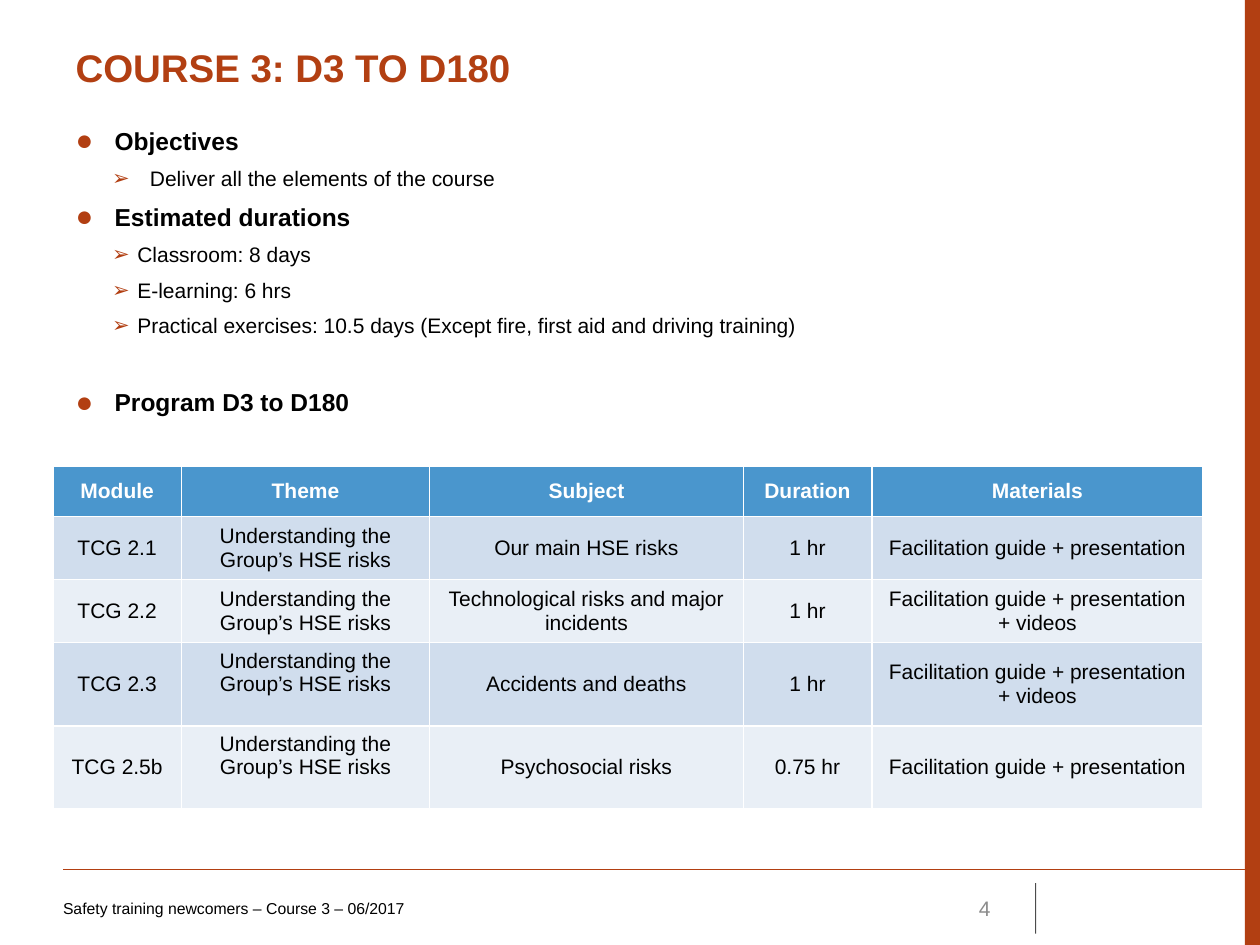
"""Build the course 3 slide: objectives, durations and program table."""
from lxml import etree
from pptx import Presentation
from pptx.dml.color import RGBColor
from pptx.enum.shapes import MSO_CONNECTOR, MSO_SHAPE
from pptx.enum.text import MSO_ANCHOR, MSO_AUTO_SIZE, PP_ALIGN
from pptx.oxml.ns import qn
from pptx.util import Inches, Pt

LEFT, MID, RIGHT = PP_ALIGN.LEFT, PP_ALIGN.CENTER, PP_ALIGN.RIGHT
TOP, CENTER = MSO_ANCHOR.TOP, MSO_ANCHOR.MIDDLE
FIXED = MSO_AUTO_SIZE.NONE
RECT, LINE = MSO_SHAPE.RECTANGLE, MSO_CONNECTOR.STRAIGHT
COLORS = {"rust": "B23F12", "black": "000000", "white": "FFFFFF", "gray": "8C8C8C",
          "head": "4A96CD", "odd": "D0DDED", "even": "E9EFF6"}


def color(name):
    return RGBColor.from_string(COLORS[name])


def write(frame, text, size=12, ink="black", bold=False, align=LEFT,
          before=0, after=0, bullet=None, scale=100, indent=0, hang=0):
    para = frame.paragraphs[0] if not frame.text else frame.add_paragraph()
    para.alignment = align
    para.space_before, para.space_after = Pt(before), Pt(after)
    if bullet:
        props = para._p.get_or_add_pPr()
        props.set("marL", str(Inches(indent)))
        props.set("indent", str(-Inches(hang)))
        tint = etree.SubElement(props, qn("a:buClr"))
        etree.SubElement(tint, qn("a:srgbClr"), val=COLORS["rust"])
        etree.SubElement(props, qn("a:buSzPct"), val=str(scale * 1000))
        etree.SubElement(props, qn("a:buFont"), typeface="Arial")
        etree.SubElement(props, qn("a:buChar"), char=bullet)
    run = para.add_run()
    run.text = text
    run.font.name, run.font.size, run.font.bold = "Arial", Pt(size), bold
    run.font.color.rgb = color(ink)
    return para


deck = Presentation()
deck.slide_width, deck.slide_height = Inches(10), Inches(7.5)
slide = deck.slides.add_slide(deck.slide_layouts[1])
shapes = slide.shapes

band = shapes.add_shape(RECT, Inches(9.88), 0, Inches(0.12), Inches(7.5))
band.shadow.inherit = False
band.fill.solid()
band.fill.fore_color.rgb = color("rust")
band.line.fill.background()

for x1, y1, x2, y2, ink, width, alpha in [(0.5, 6.9, 10, 6.9, "rust", 0.75, 100),
                                          (8.22, 7.01, 8.22, 7.41, "black", 0.5, 70)]:
    rule = shapes.add_connector(LINE, Inches(x1), Inches(y1), Inches(x2), Inches(y2))
    rule.line.color.rgb = color(ink)
    rule.line.width = Pt(width)
    tint = rule._element.spPr.find(".//" + qn("a:srgbClr"))
    etree.SubElement(tint, qn("a:alpha"), val=str(alpha * 1000))
    etree.SubElement(rule._element.spPr, qn("a:effectLst"))

title, body = shapes.title, slide.placeholders[1]
for holder, top, height in [(title, 0.3, 0.69), (body, 0.95, 2.4)]:
    holder.left, holder.top = Inches(0.5), Inches(top)
    holder.width, holder.height = Inches(8.99), Inches(height)
    holder.text_frame.auto_size = FIXED
    holder.text_frame.vertical_anchor = TOP
write(title.text_frame, "COURSE 3: D3 TO D180", size=22, ink="rust", bold=True)

POINTS = [
    (0, "Objectives", 0.31, 0.31, 0),
    (1, "Deliver all the elements of the course", 0.59, 0.3, 3),
    (0, "Estimated durations", 0.31, 0.31, 3),
    (1, "Classroom: 8 days", 0.49, 0.2, 3),
    (1, "E-learning: 6 hrs", 0.49, 0.2, 3),
    (1, "Practical exercises: 10.5 days (Except fire, first aid and driving training)",
     0.49, 0.2, 3),
    (0, "Program D3 to D180", 0.31, 0.31, 25),
]
for level, text, indent, hang, before in POINTS:
    para = write(body.text_frame, text, size=12 if level else 14, bold=not level,
                 before=before, after=3, bullet="➢" if level else "●",
                 scale=100 if level else 120, indent=indent, hang=hang)
    para.level = level

for text, left, width, size, ink, align, inset in [
        ("Safety training newcomers – Course 3 – 06/2017", 0.5, 6.08, 9, "black", LEFT, 0),
        ("4", 7.17, 0.79, 12, "gray", RIGHT, 0.1)]:
    box = shapes.add_textbox(Inches(left), Inches(7.01), Inches(width), Inches(0.4))
    frame = box.text_frame
    frame.word_wrap = True
    frame.vertical_anchor = CENTER
    frame.margin_left = Inches(inset)
    write(frame, text, size=size, ink=ink, align=align)

THEME = "Understanding the Group’s HSE risks"
GUIDE = "Facilitation guide + presentation"
ROWS = [
    ("Module", "Theme", "Subject", "Duration", "Materials"),
    ("TCG 2.1", THEME, "Our main HSE risks", "1 hr", GUIDE),
    ("TCG 2.2", THEME, "Technological risks and major incidents", "1 hr", GUIDE + " + videos"),
    ("TCG 2.3", THEME, "Accidents and deaths", "1 hr", GUIDE + " + videos"),
    ("TCG 2.5b", THEME, "Psychosocial risks", "0.75 hr", GUIDE),
]
WIDTHS = [1.02, 1.97, 2.49, 1.02, 2.63]
HEIGHTS = [0.4, 0.48, 0.48, 0.66, 0.66]
grid = shapes.add_table(len(ROWS), len(WIDTHS), Inches(0.42), Inches(3.7),
                        Inches(sum(WIDTHS)), Inches(sum(HEIGHTS))).table
for col, width in zip(grid.columns, WIDTHS):
    col.width = Inches(width)
for r, (row, height) in enumerate(zip(ROWS, HEIGHTS)):
    grid.rows[r].height = Inches(height)
    shade = "head" if r == 0 else "odd" if r % 2 else "even"
    for c, text in enumerate(row):
        cell = grid.cell(r, c)
        cell.fill.solid()
        cell.fill.fore_color.rgb = color(shade)
        cell.vertical_anchor = TOP if c == 1 and r > 2 else CENTER
        write(cell.text_frame, text, ink="black" if r else "white", bold=r == 0, align=MID)

deck.save("out.pptx")
